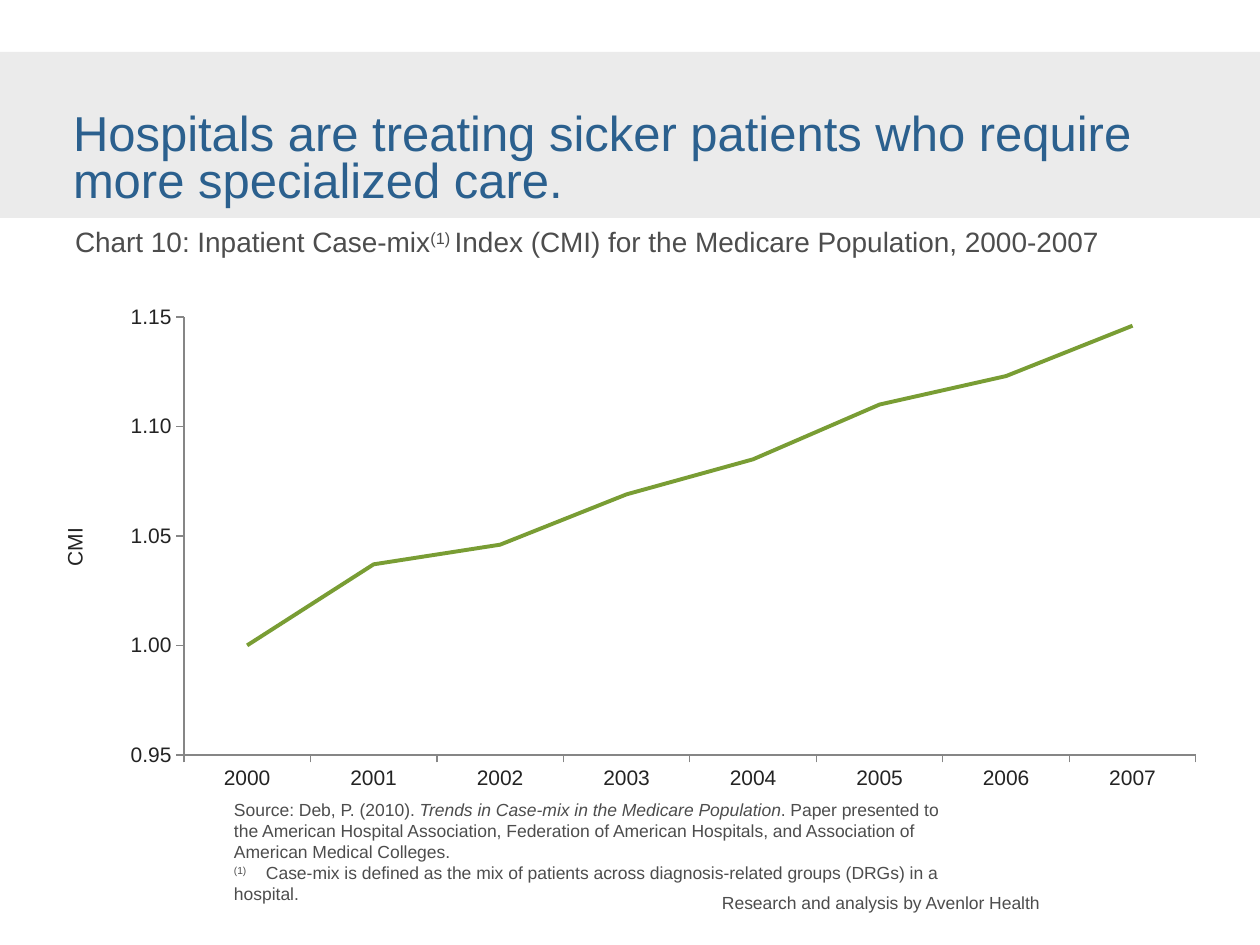
from lxml import etree
from pptx import Presentation
from pptx.chart.data import CategoryChartData
from pptx.dml.color import RGBColor
from pptx.enum.chart import XL_CHART_TYPE, XL_TICK_MARK
from pptx.enum.shapes import MSO_SHAPE
from pptx.enum.text import MSO_ANCHOR, PP_ALIGN
from pptx.oxml.ns import qn
from pptx.util import Emu, Pt

LINE = XL_CHART_TYPE.LINE
OUTSIDE = XL_TICK_MARK.OUTSIDE
RECTANGLE = MSO_SHAPE.RECTANGLE
TOP, BOTTOM = MSO_ANCHOR.TOP, MSO_ANCHOR.BOTTOM
LEFT = PP_ALIGN.LEFT

FONT = "Arial"
BAND = RGBColor(0xEB, 0xEB, 0xEB)
BLUE = RGBColor(0x2B, 0x60, 0x8E)
GREY = RGBColor(0x4D, 0x4D, 0x4D)
BLACK = RGBColor(0x23, 0x23, 0x23)
AXIS = RGBColor(0x86, 0x86, 0x86)
GREEN = RGBColor(0x79, 0x9D, 0x34)

PX = 914400 // 126
PAGE = (1260, 945)
BAND_AT = (0, 52, 1260, 166)
TITLE_AT = (73, 113, 1134, 95)
SUBTITLE_AT = (75, 231, 1106, 45)
CHART_AT = (50, 296, 1169, 504)
PLOT_AT = (184, 317, 1012, 438)
AXIS_TITLE_AT = (58, 524)
NOTES_AT = (234, 799, 716, 106)
CREDIT_AT = (722, 892, 333, 22)

TITLE = [[("Hospitals are treating sicker patients who require more specialized care.", "")]]
SUBTITLE = [[
    ("Chart 10: Inpatient Case-mix", ""),
    ("(1) ", "super"),
    ("Index (CMI) for the Medicare Population, 2000-2007", ""),
]]
NOTES = [
    [
        ("Source: Deb, P. (2010). ", ""),
        ("Trends in Case-mix in the Medicare Population", "italic"),
        (". Paper presented to the American Hospital Association, Federation of American "
         "Hospitals, and Association of American Medical Colleges.", ""),
    ],
    [
        ("(1)\t", "super"),
        ("Case-mix is defined as the mix of patients across diagnosis-related groups "
         "(DRGs) in a hospital.", ""),
    ],
]
CREDIT = [[("Research and analysis by Avenlor Health", "")]]
CMI = {"2000": 1, "2001": 1.037, "2002": 1.046, "2003": 1.069,
       "2004": 1.085, "2005": 1.11, "2006": 1.123, "2007": 1.146}


def emu(lengths):
    return [Emu(length * PX) for length in lengths]


def fill_text(box, paragraphs, size, color, spacing=1.0, anchor=TOP):
    frame = box.text_frame
    frame.word_wrap = True
    frame.vertical_anchor = anchor
    frame.margin_left = frame.margin_top = frame.margin_right = frame.margin_bottom = 0
    for index, pieces in enumerate(paragraphs):
        para = frame.add_paragraph() if index else frame.paragraphs[0]
        para.alignment = LEFT
        para.line_spacing = spacing
        if any("\t" in text for text, _ in pieces):
            tabs = etree.SubElement(para._p.get_or_add_pPr(), qn("a:tabLst"))
            etree.SubElement(tabs, qn("a:tab"), pos=str(32 * PX), algn="l")
        for text, style in pieces:
            span = para.add_run()
            span.text = text
            span.font.name = FONT
            span.font.size = Pt(size)
            span.font.color.rgb = color
            if style == "italic":
                span.font.italic = True
            if style == "super":
                span.font._element.set("baseline", "30000")


def add_text(page, at, *content):
    fill_text(page.shapes.add_textbox(*emu(at)), *content)


def place_in_chart(parent, index, at, inner=False):
    for old in parent.findall(qn("c:layout")):
        parent.remove(old)
    layout = etree.Element(qn("c:layout"))
    parent.insert(index, layout)
    manual = etree.SubElement(layout, qn("c:manualLayout"))
    left, top, width, height = CHART_AT
    shares = [(at[0] - left) / width, (at[1] - top) / height]
    shares += [length / total for length, total in zip(at[2:], (width, height))]
    settings = [("layoutTarget", "inner")] if inner else []
    settings += [("xMode", "edge"), ("yMode", "edge")]
    settings += [(name, f"{share:.4f}") for name, share in zip("xywh", shares)]
    for name, value in settings:
        etree.SubElement(manual, qn(f"c:{name}"), val=value)


def add_cmi_chart(page):
    data = CategoryChartData(number_format="#,##0.00")
    data.categories = list(CMI)
    data.add_series("Series 1", list(CMI.values()))
    chart = page.shapes.add_chart(LINE, *emu(CHART_AT), data).chart
    chart.has_legend = False
    chart.has_title = False
    chart.font.name = FONT
    chart.font.size = Pt(18)
    chart.font.color.rgb = BLACK
    chart.plots[0].vary_by_categories = False

    series = chart.plots[0].series[0]
    series.smooth = False
    series.format.line.color.rgb = GREEN
    series.format.line.width = Pt(2.25)

    values = chart.value_axis
    for axis in (chart.category_axis, values):
        axis.has_major_gridlines = False
        axis.major_tick_mark = OUTSIDE
        axis.tick_labels.font.size = Pt(12)
        axis.format.line.color.rgb = AXIS
        axis.format.line.width = Pt(0.75)
    values.minimum_scale, values.maximum_scale, values.major_unit = 0.95, 1.15, 0.05
    values.tick_labels.number_format = "#,##0.00"
    values.tick_labels.number_format_is_linked = False

    span = values.axis_title.text_frame.paragraphs[0].add_run()
    span.text = "CMI"
    span.font.name = FONT
    span.font.size = Pt(12)
    span.font.bold = False
    span.font.color.rgb = BLACK
    place_in_chart(values.axis_title._element, 1, AXIS_TITLE_AT)
    place_in_chart(chart._chartSpace.chart.plotArea, 0, PLOT_AT, inner=True)


def main():
    deck = Presentation()
    deck.slide_width, deck.slide_height = emu(PAGE)
    page = deck.slides.add_slide(deck.slide_layouts[5])

    title = page.shapes.title
    title.left, title.top, title.width, title.height = emu(TITLE_AT)
    fill_text(title, TITLE, 28, BLUE, 0.8, BOTTOM)

    band = page.shapes.add_shape(RECTANGLE, *emu(BAND_AT))
    band.shadow.inherit = False
    band.fill.solid()
    band.fill.fore_color.rgb = BAND
    band.line.fill.background()
    title._element.addprevious(band._element)

    add_text(page, CREDIT_AT, CREDIT, 10, GREY)
    add_text(page, SUBTITLE_AT, SUBTITLE, 16, GREY, 0.8)
    add_cmi_chart(page)
    add_text(page, NOTES_AT, NOTES, 10, GREY)
    deck.save("out.pptx")


if __name__ == "__main__":
    main()
